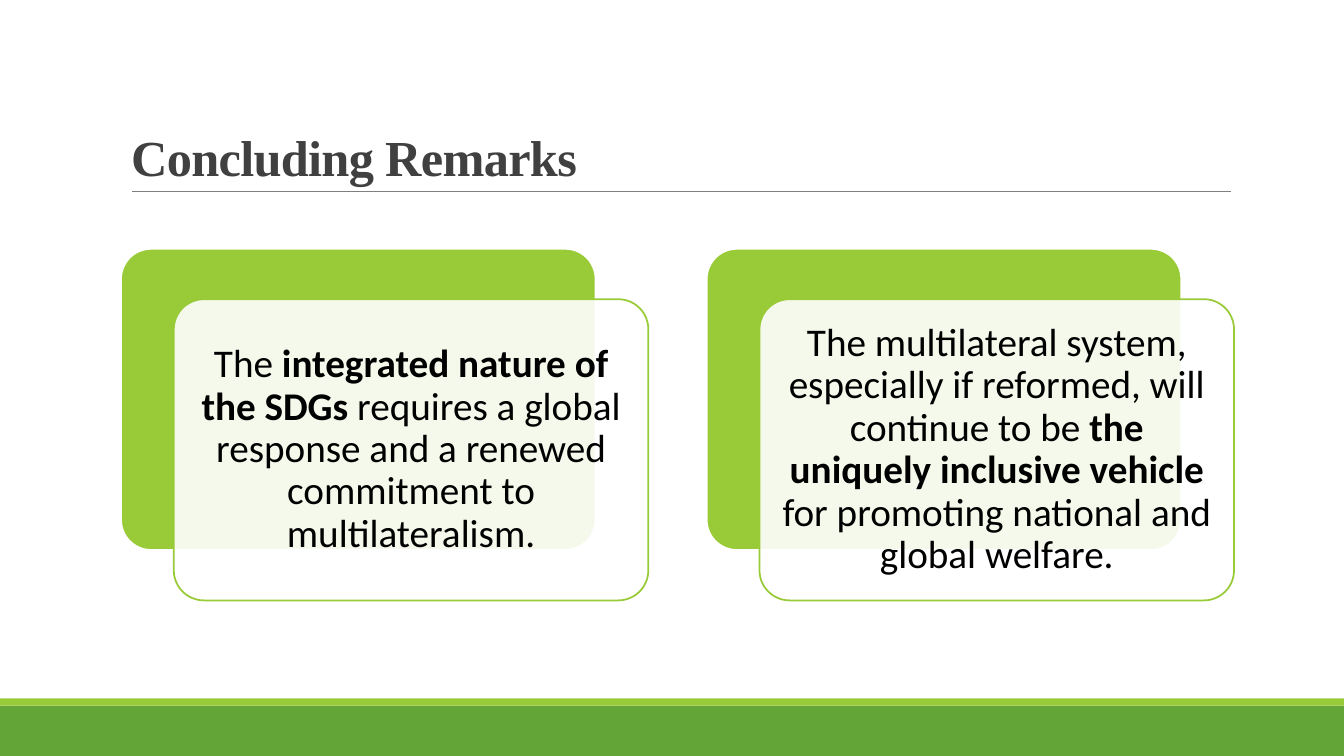
from dataclasses import dataclass

from lxml import etree
from pptx import Presentation
from pptx.dml.color import RGBColor
from pptx.enum import shapes, text
from pptx.oxml import ns
from pptx.util import Cm, Pt

WHITE = RGBColor(0xFF, 0xFF, 0xFF)
BLACK = RGBColor(0x00, 0x00, 0x00)
LIME = RGBColor(0x99, 0xCB, 0x38)
GREEN = RGBColor(0x63, 0xA5, 0x37)
GREY = RGBColor(0x80, 0x80, 0x80)
CHARCOAL = RGBColor(0x40, 0x40, 0x40)

SLIDE_WIDTH, SLIDE_HEIGHT = 33.87, 19.05
CARD_LEFT, CARD_TOP = 3.05, 6.27
CARD_WIDTH, CARD_HEIGHT = 11.96, 7.59
CARD_PITCH = 14.76
FRONT_SHIFT_X, FRONT_SHIFT_Y = 1.33, 1.27


@dataclass
class Band:
    top: float
    height: float
    color: RGBColor


@dataclass
class Remark:
    opening: str
    emphasis: str
    ending: str


BANDS = [Band(17.78, 1.27, GREEN), Band(17.6, 0.18, LIME)]
REMARKS = [
    Remark(
        "The ",
        "integrated nature of the SDGs",
        " requires a global response and a renewed commitment to multilateralism.",
    ),
    Remark(
        "The multilateral system, especially if reformed, will continue to be ",
        "the uniquely inclusive vehicle",
        " for promoting national and global welfare.",
    ),
]


def add_band(page, band: Band) -> None:
    box = page.shapes.add_shape(
        shapes.MSO_SHAPE.RECTANGLE,
        0, Cm(band.top), Cm(SLIDE_WIDTH), Cm(band.height),
    )
    box.shadow.inherit = False
    box.fill.solid()
    box.fill.fore_color.rgb = band.color
    box.line.fill.background()


def add_title_rule(page) -> None:
    rule = page.shapes.add_connector(
        shapes.MSO_CONNECTOR.STRAIGHT, Cm(3.33), Cm(4.83), Cm(31.01), Cm(4.83)
    )
    rule.line.color.rgb = GREY
    rule.line.width = Pt(0.5)
    etree.SubElement(rule._element.spPr, ns.qn("a:effectLst"))


def format_title(page, wording: str) -> None:
    title = page.shapes.title
    title.left, title.top = Cm(3.05), Cm(0.79)
    title.width, title.height = Cm(27.94), Cm(4.04)
    frame = title.text_frame
    frame.text = wording
    frame.word_wrap = True
    frame.auto_size = text.MSO_AUTO_SIZE.NONE
    frame.vertical_anchor = text.MSO_ANCHOR.BOTTOM
    para = frame.paragraphs[0]
    para.alignment = text.PP_ALIGN.LEFT
    para.line_spacing = 0.85
    para.font.name = "Times New Roman"
    para.font.size = Pt(36)
    para.font.bold = True
    para.font.color.rgb = CHARCOAL
    para.runs[0].font._element.set("spc", "-50")


def add_panel(page, left: float, top: float, fill: RGBColor, line: RGBColor):
    panel = page.shapes.add_shape(
        shapes.MSO_SHAPE.ROUNDED_RECTANGLE,
        Cm(left), Cm(top), Cm(CARD_WIDTH), Cm(CARD_HEIGHT),
    )
    panel.adjustments[0] = 0.1
    panel.shadow.inherit = False
    panel.fill.solid()
    panel.fill.fore_color.rgb = fill
    panel.line.color.rgb = line
    panel.line.width = Pt(1.25)
    return panel


def add_card(page, left: float, remark: Remark) -> None:
    add_panel(page, left, CARD_TOP, LIME, WHITE)
    front = add_panel(
        page, left + FRONT_SHIFT_X, CARD_TOP + FRONT_SHIFT_Y, WHITE, LIME
    )
    color = front._element.spPr.find(ns.qn("a:solidFill"))[0]
    etree.SubElement(color, ns.qn("a:alpha"), val="90000")

    frame = front.text_frame
    frame.word_wrap = True
    frame.vertical_anchor = text.MSO_ANCHOR.MIDDLE
    frame.margin_left = frame.margin_right = Cm(0.3)
    frame.margin_top = frame.margin_bottom = Cm(0.3)
    para = frame.paragraphs[0]
    para.alignment = text.PP_ALIGN.CENTER
    para.line_spacing = 0.9
    para.font.name = "Calibri"
    para.font.size = Pt(28)
    para.font.color.rgb = BLACK
    for wording in (remark.opening, remark.emphasis, remark.ending):
        span = para.add_run()
        span.text = wording
        span.font.bold = wording == remark.emphasis


def main() -> None:
    deck = Presentation()
    deck.slide_width, deck.slide_height = Cm(SLIDE_WIDTH), Cm(SLIDE_HEIGHT)
    page = deck.slides.add_slide(deck.slide_layouts.get_by_name("Title Only"))
    for band in BANDS:
        add_band(page, band)
    add_title_rule(page)
    format_title(page, "Concluding Remarks")
    for index, remark in enumerate(REMARKS):
        add_card(page, CARD_LEFT + index * CARD_PITCH, remark)
    deck.save("out.pptx")


if __name__ == "__main__":
    main()
